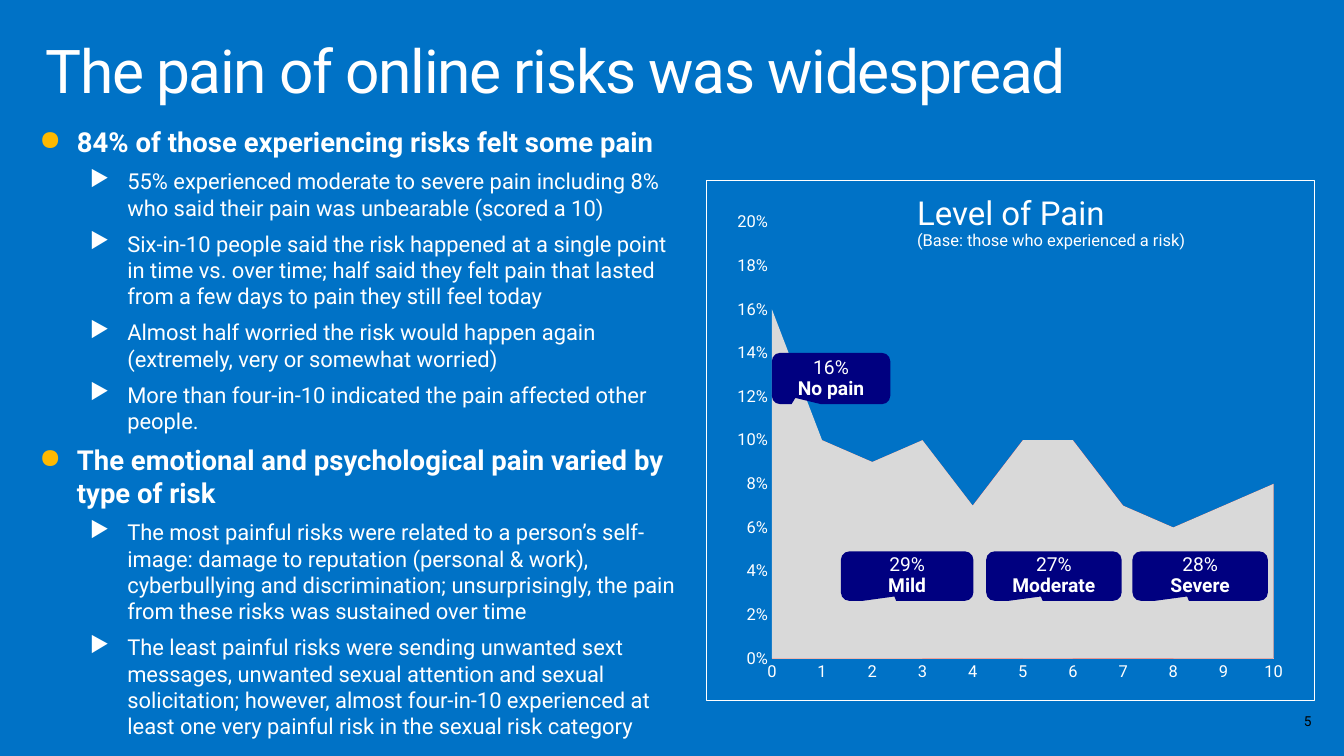
from dataclasses import dataclass
from typing import NamedTuple, Optional

from lxml.etree import SubElement
from pptx import Presentation
from pptx.chart.data import CategoryChartData as ChartData
from pptx.dml.color import RGBColor as Rgb
from pptx.enum.chart import XL_CHART_TYPE as Kind, XL_TICK_MARK as Tick
from pptx.enum.shapes import MSO_SHAPE as Shape
from pptx.enum.text import MSO_ANCHOR as Anchor, MSO_AUTO_SIZE as Fit, PP_ALIGN as Align
from pptx.oxml.ns import qn
from pptx.util import Inches, Pt


@dataclass(frozen=True)
class Theme:
    font: str = "Roboto"
    back: str = "0072C6"
    white: str = "FFFFFF"
    black: str = "000000"
    navy: str = "000080"
    gold: str = "FFB900"
    grey: str = "808080"
    title: int = 44
    head: int = 20
    sub: int = 16
    label: int = 24
    call: int = 14
    axis: int = 12
    page: int = 10


class Box(NamedTuple):
    left: float
    top: float
    width: float
    height: float

    def emu(self) -> list:
        return [Inches(n) for n in self]


class Bullet(NamedTuple):
    mark: str
    level: int
    indent: float
    color: str


class Line(NamedTuple):
    text: str
    size: int
    bold: bool = False
    bullet: Optional[Bullet] = None


class Callout(NamedTuple):
    share: str
    name: str
    box: Box
    tip: tuple


class Series(NamedTuple):
    name: str
    start: int
    values: list
    color: str


T = Theme()
DOT = Bullet("●", 0, 0.38, T.gold)
ARROW = Bullet("▶", 1, 0.89, T.white)


def head(text: str) -> Line:
    return Line(text, T.head, True, DOT)


def sub(text: str) -> Line:
    return Line(text, T.sub, False, ARROW)


POINTS = [
    head("84% of those experiencing risks felt some pain"),
    sub("55% experienced moderate to severe pain including 8% who said their pain was "
        "unbearable (scored a 10)"),
    sub("Six-in-10 people said the risk happened at a single point in time vs. over time; "
        "half said they felt pain that lasted from a few days to pain they still feel today"),
    sub("Almost half worried the risk would happen again (extremely, very or somewhat worried)"),
    sub("More than four-in-10 indicated the pain affected other people."),
    head("The emotional and psychological pain varied by type of risk"),
    sub("The most painful risks were related to a person’s self-image: damage to reputation "
        "(personal & work), cyberbullying and discrimination; unsurprisingly, the pain from "
        "these risks was sustained over time"),
    sub("The least painful risks were sending unwanted sext messages, unwanted sexual attention "
        "and sexual solicitation; however, almost four-in-10 experienced at least one very "
        "painful risk in the sexual risk category"),
]

PAIN = [0.16, 0.1, 0.09, 0.1, 0.07, 0.1, 0.1, 0.07, 0.06, 0.07, 0.08]
SERIES = [
    Series("Series 1", 0, PAIN, "D9D9D9"),
    Series("Series 2", 1, PAIN[1:5], "FF6347"),
    Series("Series 3", 4, PAIN[4:8], "FF0000"),
    Series("Series 4", 7, PAIN[7:], "B22222"),
]

TIP = (-0.096, 0.413, 0.167)
CALLS = [
    Callout("16%", "No pain", Box(7.81, 3.57, 1.2, 0.52), (-0.301, 0.378, 0.167)),
    Callout("29%", "Mild", Box(8.51, 5.58, 1.34, 0.5), TIP),
    Callout("27%", "Moderate", Box(9.98, 5.58, 1.37, 0.5), TIP),
    Callout("28%", "Severe", Box(11.46, 5.58, 1.37, 0.5), TIP),
]


def mark(para, bullet: Bullet) -> None:
    para.level = bullet.level
    para.space_before, para.space_after = Pt(6), Pt(1)
    props = para._p.get_or_add_pPr()
    props.set("marL", str(Inches(bullet.indent)))
    props.set("indent", str(Inches(-0.38)))
    color = SubElement(props, qn("a:buClr"))
    SubElement(color, qn("a:srgbClr")).set("val", bullet.color)
    SubElement(props, qn("a:buChar")).set("char", bullet.mark)


def write(frame, lines: list, *, color: str = T.white, align=Align.LEFT, anchor=Anchor.TOP,
          inset: tuple = (0.1, 0.05), pitch: float = 1.0, track: int = 0,
          wrap: bool = True, fit=Fit.NONE) -> None:
    frame.word_wrap, frame.auto_size, frame.vertical_anchor = wrap, fit, anchor
    frame.margin_left = frame.margin_right = Inches(inset[0])
    frame.margin_top = frame.margin_bottom = Inches(inset[1])
    for i, line in enumerate(lines):
        para = frame.add_paragraph() if i else frame.paragraphs[0]
        para.alignment, para.line_spacing = align, pitch
        if line.bullet:
            mark(para, line.bullet)
        run = para.add_run()
        run.text = line.text
        style(run.font, line.size, color, line.bold)
        if track:
            run._r.get_or_add_rPr().set("spc", str(track))


def style(font, size: int, color: str, bold: bool = False) -> None:
    font.name, font.size, font.bold = T.font, Pt(size), bold
    font.color.rgb = Rgb.from_string(color)


def block(slide, kind, box: Box, fill: str = "", line: str = ""):
    shape = slide.shapes.add_shape(kind, *box.emu())
    shape.shadow.inherit = False
    for paint, color in ((shape.fill, fill), (shape.line.fill, line)):
        if color:
            paint.solid()
            paint.fore_color.rgb = Rgb.from_string(color)
        else:
            paint.background()
    if line:
        shape.line.width = Pt(0.75)
    return shape


def graph(slide, box: Box) -> None:
    data = ChartData(number_format="0%")
    data.categories = [str(n) for n in range(len(PAIN))]
    for item in SERIES:
        tail = len(PAIN) - item.start - len(item.values)
        data.add_series(item.name, [None] * item.start + item.values + [None] * tail)
    chart = slide.shapes.add_chart(Kind.AREA, *box.emu(), data).chart
    chart.has_legend = chart.has_title = False
    style(chart.font, T.page, T.grey)
    chart.plots[0].vary_by_categories = False
    for item, series in zip(SERIES, chart.plots[0].series):
        series.format.fill.solid()
        series.format.fill.fore_color.rgb = Rgb.from_string(item.color)

    # Axes
    cat, val = chart.category_axis, chart.value_axis
    for axis in (cat, val):
        axis.major_tick_mark = axis.minor_tick_mark = Tick.NONE
        axis.has_major_gridlines = False
        style(axis.tick_labels.font, T.axis, T.white)
    cat.format.line.color.rgb = Rgb.from_string(T.white)
    cat.format.line.width = Pt(0.75)
    val.format.line.fill.background()
    val.minimum_scale, val.maximum_scale, val.major_unit = 0, 0.2, 0.02
    val.tick_labels.number_format, val.tick_labels.number_format_is_linked = "0%", False

    # Area starts on the value axis; plot has a fixed place
    root = chart._chartSpace
    next(root.iter(qn("c:crossBetween"))).set("val", "midCat")
    plot = next(root.iter(qn("c:plotArea")))
    for old in plot.findall(qn("c:layout")):
        plot.remove(old)
    frame = SubElement(plot, qn("c:layout"))
    plot.insert(0, frame)
    place = SubElement(frame, qn("c:manualLayout"))
    for tag, value in (("layoutTarget", "inner"), ("xMode", "edge"), ("yMode", "edge"),
                       ("x", 0.08), ("y", 0.04), ("w", 0.88), ("h", 0.89)):
        SubElement(place, qn(f"c:{tag}")).set("val", str(value))


def main() -> None:
    deck = Presentation()
    deck.slide_width, deck.slide_height = Inches(13.6), Inches(7.65)
    slide = deck.slides.add_slide(deck.slide_layouts[5])
    slide.background.fill.solid()
    slide.background.fill.fore_color.rgb = Rgb.from_string(T.back)

    # Title and page number
    title = slide.shapes.title
    title.left, title.top, title.width, title.height = Box(0.3, 0.32, 13, 1).emu()
    write(title.text_frame, [Line("The pain of online risks was widespread", T.title)],
          inset=(0.16, 0.1), pitch=0.9, track=-100)
    page = slide.shapes.add_textbox(*Box(10.2, 7.09, 3.17, 0.41).emu())
    write(page.text_frame, [Line("5", T.page)], color=T.black, align=Align.RIGHT,
          anchor=Anchor.MIDDLE)

    # Findings
    body = block(slide, Shape.RECTANGLE, Box(0.3, 1.22, 6.72, 6.38), fill=T.back)
    write(body.text_frame, POINTS, fit=Fit.SHAPE_TO_FIT_TEXT)

    # Chart with callouts, label and border
    graph(slide, Box(7.35, 2.05, 5.77, 4.96))
    for call in CALLS:
        shape = block(slide, Shape.ROUNDED_RECTANGULAR_CALLOUT, call.box, fill=T.navy)
        for i, value in enumerate(call.tip):
            shape.adjustments[i] = value
        write(shape.text_frame, [Line(call.share, T.call), Line(call.name, T.call, True)],
              align=Align.CENTER, anchor=Anchor.MIDDLE, inset=(0.2, 0.16), pitch=0.9)
    label = slide.shapes.add_textbox(*Box(9.08, 1.83, 3.12, 0.87).emu())
    write(label.text_frame, [Line("Level of Pain", T.label),
                             Line("(Base: those who experienced a risk)", T.axis)],
          inset=(0.2, 0.16), pitch=0.9, wrap=False, fit=Fit.SHAPE_TO_FIT_TEXT)
    block(slide, Shape.RECTANGLE, Box(7.15, 1.83, 6.15, 5.26), line=T.white)

    deck.save("out.pptx")


if __name__ == "__main__":
    main()
